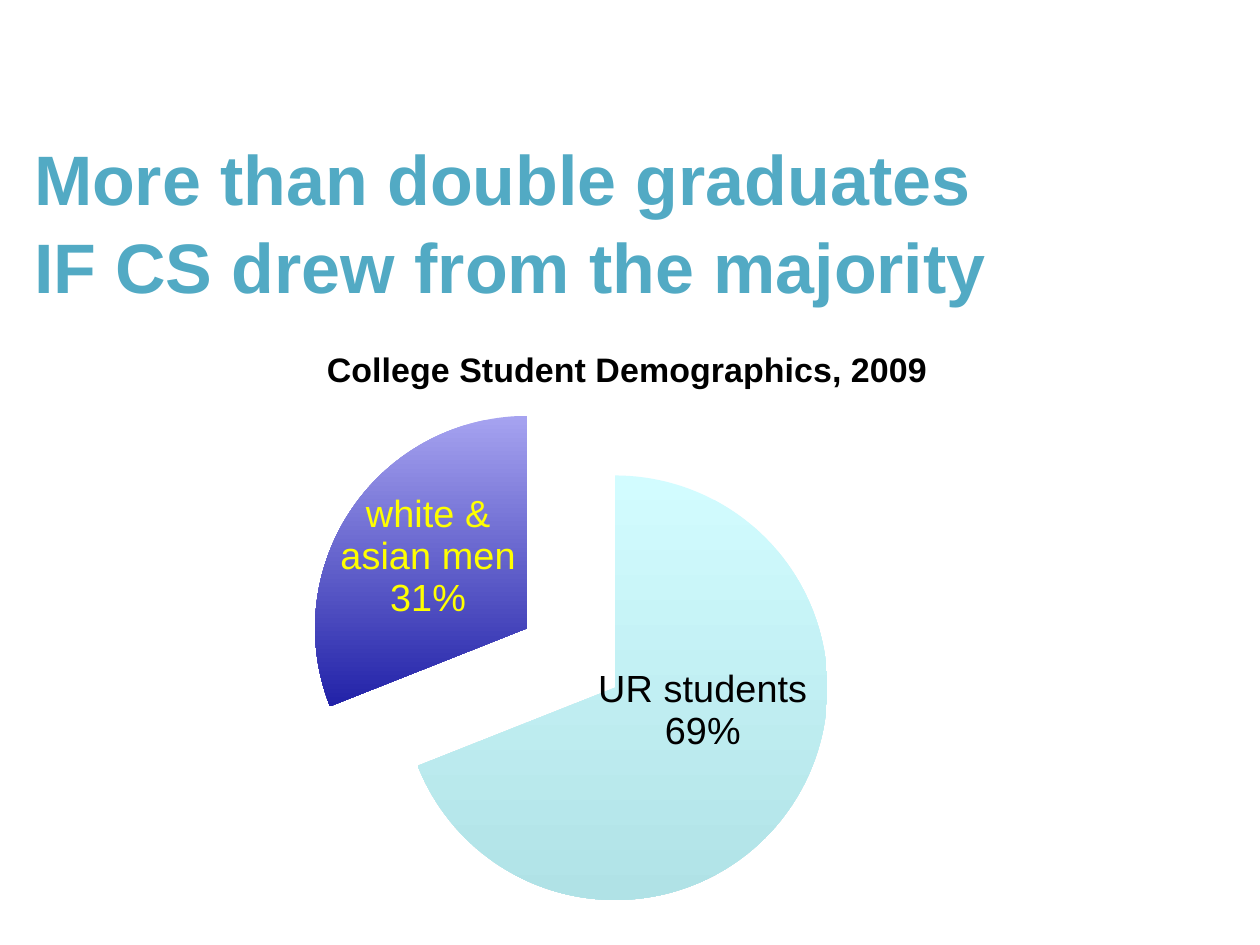
from dataclasses import dataclass
from typing import Optional

import pptx
import pptx.chart.data
import pptx.dml.color
import pptx.enum.chart
import pptx.enum.text
import pptx.oxml
import pptx.oxml.ns
import pptx.util
from pptx.util import Inches

FONT = "Arial"
COLOURS = {
    "title": "52AAC4",
    "black": "000000",
    "yellow": "FFFF00",
    "pale top": "D2FCFF",
    "pale bottom": "B0E2E6",
    "blue top": "A6A3F0",
    "blue bottom": "2222A8",
}


@dataclass
class Slice:
    name: str
    percent: int
    top: str
    bottom: str
    text: str
    shift: tuple[float, float]
    custom_label: Optional[str] = None


SLICES = [
    Slice("UR students", 69, "pale top", "pale bottom", "black", (0, -0.06), "UR students\n69%"),
    Slice("white & asian men", 31, "blue top", "blue bottom", "yellow", (-0.01, -0.02)),
]


def colour(name: str) -> pptx.dml.color.RGBColor:
    return pptx.dml.color.RGBColor.from_string(COLOURS[name])


def style_font(font, size: float, colour_name: str, bold: bool = False) -> None:
    font.name = FONT
    font.size = pptx.util.Pt(size)
    font.bold = bold
    font.color.rgb = colour(colour_name)


def manual_layout(x: float, y: float, extra: str = "", size: str = ""):
    """Return a c:layout element; extra goes before x and y, size after."""
    return pptx.oxml.parse_xml(
        f'<c:layout {pptx.oxml.ns.nsdecls("c")}><c:manualLayout>{extra}'
        f'<c:x val="{x}"/><c:y val="{y}"/>{size}</c:manualLayout></c:layout>'
    )


def replace_layout(parent, layout, position: int) -> None:
    for old in parent.xpath("./c:layout"):
        parent.remove(old)
    parent.insert(position, layout)


def style_slice(point, piece: Slice) -> None:
    fill = point.format.fill
    fill.gradient()
    fill.gradient_angle = 270
    for stop, name in zip(fill.gradient_stops, (piece.top, piece.bottom)):
        stop.color.rgb = colour(name)
    point.format.line.fill.background()

    label = point.data_label
    if piece.custom_label:
        label.text_frame.text = piece.custom_label
        for para in label.text_frame.paragraphs:
            style_font(para.font, 21.6, piece.text)
    else:
        style_font(label.font, 21.6, piece.text)
    label.position = pptx.enum.chart.XL_LABEL_POSITION.CENTER


def add_pie(page) -> None:
    data = pptx.chart.data.CategoryChartData()
    data.categories = [piece.name for piece in SLICES]
    data.add_series("Series 1", [piece.percent for piece in SLICES])
    chart = page.shapes.add_chart(
        pptx.enum.chart.XL_CHART_TYPE.PIE_EXPLODED,
        Inches(0.39), Inches(2.56), Inches(8.98), Inches(4.89), data,
    ).chart
    style_font(chart.font, 16.2, "black")
    chart.has_legend = False

    chart.has_title = True
    heading = chart.chart_title.text_frame
    heading.text = "College Student Demographics, 2009"
    style_font(heading.paragraphs[0].font, 19.4, "black", bold=True)

    plot = chart.plots[0]
    plot.vary_by_categories = True
    series = plot.series[0]
    labels = series.data_labels
    labels.show_value = False
    labels.show_percentage = labels.show_category_name = True
    labels.number_format = "0%"
    labels.number_format_is_linked = False
    style_font(labels.font, 21.6, "black")
    for index, piece in enumerate(SLICES):
        style_slice(series.points[index], piece)

    root = chart.element
    for old in root.xpath("//c:explosion"):
        old.set("val", "25")
    edges = '<c:xMode val="edge"/><c:yMode val="edge"/>'
    replace_layout(root.xpath("//c:chart/c:title")[0], manual_layout(0.24, 0.03, edges), 1)
    replace_layout(
        root.xpath("//c:plotArea")[0],
        manual_layout(0.227, 0.089, '<c:layoutTarget val="inner"/>' + edges,
                      '<c:w val="0.469"/><c:h val="0.911"/>'),
        0,
    )
    for label, piece in zip(root.xpath("//c:dLbl"), SLICES):
        replace_layout(label, manual_layout(*piece.shift), 1)
        for tag, shown in (("showVal", "0"), ("showCatName", "1"), ("showPercent", "1")):
            label.xpath(f"./c:{tag}")[0].set("val", shown)
        separator = pptx.oxml.parse_xml(
            f'<c:separator {pptx.oxml.ns.nsdecls("c")}>\n</c:separator>')
        label.append(separator)


def set_title(page) -> None:
    title = page.shapes.title
    title.left, title.top = Inches(0.17), Inches(0.83)
    title.width, title.height = Inches(9.75), Inches(1.83)
    title.text_frame.text = "More than double graduates \vIF CS drew from the majority"
    title.text_frame.vertical_anchor = pptx.enum.text.MSO_ANCHOR.MIDDLE
    para = title.text_frame.paragraphs[0]
    para.alignment = pptx.enum.text.PP_ALIGN.LEFT
    para.line_spacing = 1.04
    style_font(para.font, 40, "title", bold=True)


def main() -> None:
    deck = pptx.Presentation()
    deck.slide_width, deck.slide_height = Inches(10), Inches(7.5)
    page = deck.slides.add_slide(deck.slide_layouts[0])
    subtitle = page.placeholders[1].element
    subtitle.getparent().remove(subtitle)
    add_pie(page)
    set_title(page)
    deck.save("out.pptx")


if __name__ == "__main__":
    main()
